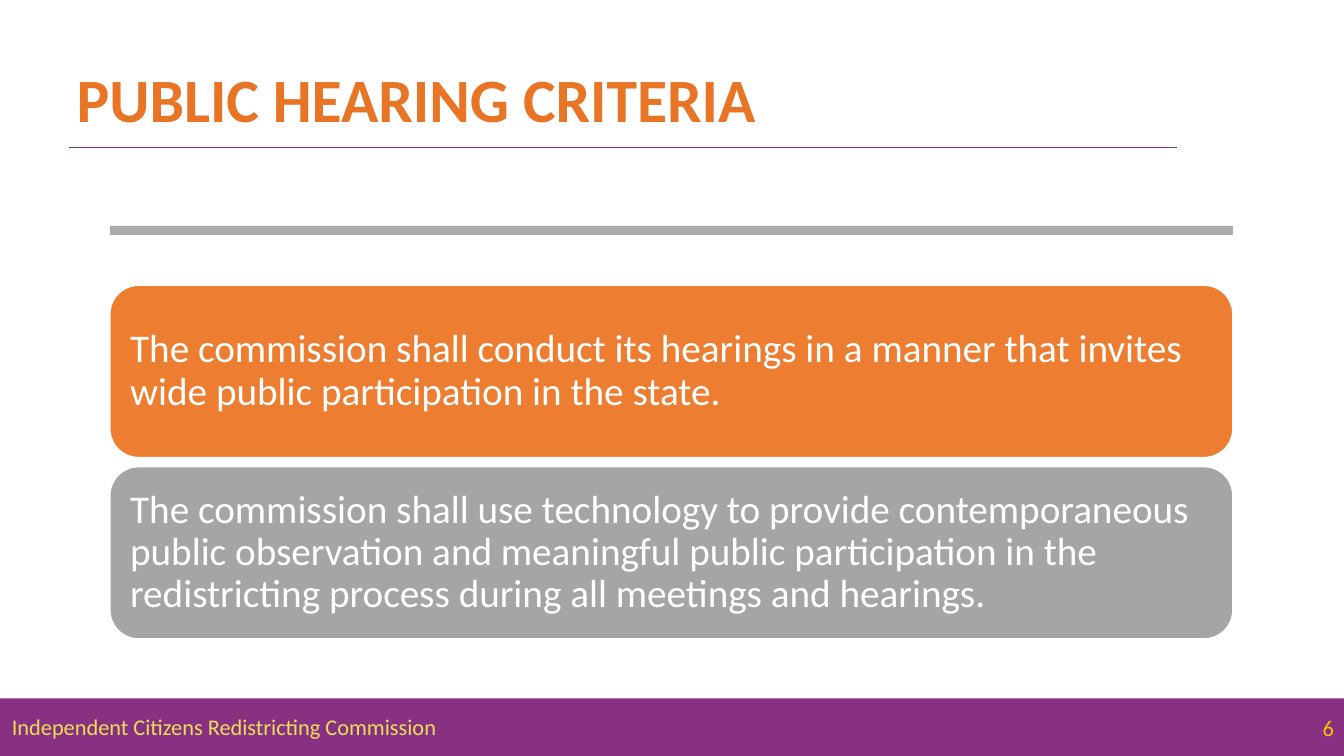
"""Build the public hearing criteria slide."""
from dataclasses import dataclass

from lxml.etree import SubElement
from pptx import Presentation
from pptx.dml.color import RGBColor
from pptx.enum.shapes import MSO_CONNECTOR, MSO_SHAPE
from pptx.enum.text import MSO_ANCHOR, MSO_AUTO_SIZE, PP_ALIGN
from pptx.oxml.ns import qn
from pptx.shapes.autoshape import Shape
from pptx.slide import Slide
from pptx.text.text import TextFrame
from pptx.util import Cm, Pt

COLORS = {
    "purple": "883182",
    "gold": "FFC000",
    "yellow": "EBDF57",
    "title": "E87425",
    "orange": "ED7D31",
    "gray": "A5A5A5",
    "bar": "808080",
    "white": "FFFFFF",
}
FONT = "Calibri"
WIDTH, HEIGHT = 33.87, 19.05
BAND_TOP = 17.6
CARD_LEFT, CARD_TOP, CARD_WIDTH, CARD_HEIGHT = 2.77, 7.19, 28.3, 4.34
CARD_PITCH = 4.57


@dataclass(frozen=True)
class Box:
    left: float
    top: float
    width: float
    height: float

    def lengths(self) -> tuple[Cm, Cm, Cm, Cm]:
        return Cm(self.left), Cm(self.top), Cm(self.width), Cm(self.height)


@dataclass(frozen=True)
class Card:
    text: str
    fill: str


CARDS = [
    Card("The commission shall conduct its hearings in a manner that invites "
         "wide public participation in the state.", "orange"),
    Card("The commission shall use technology to provide contemporaneous "
         "public observation and meaningful public participation in the "
         "redistricting process during all meetings and hearings.", "gray"),
]


def rgb(name: str) -> RGBColor:
    return RGBColor.from_string(COLORS[name])


def write(tf: TextFrame, text: str, *, size: float, color: str, bold: bool = False,
          align: PP_ALIGN = PP_ALIGN.LEFT, anchor: MSO_ANCHOR = MSO_ANCHOR.MIDDLE,
          spacing: float = 1.0, margin: float = 0.25) -> None:
    tf.word_wrap = True
    tf.auto_size = MSO_AUTO_SIZE.NONE
    tf.vertical_anchor = anchor
    tf.margin_left = tf.margin_right = Cm(margin)
    tf.margin_top = tf.margin_bottom = Cm(0.13)
    p = tf.paragraphs[0]
    p.alignment = align
    p.line_spacing = spacing
    r = p.add_run()
    r.text = text
    r.font.name = FONT
    r.font.size = Pt(size)
    r.font.bold = bold
    r.font.color.rgb = rgb(color)


def add_block(s: Slide, kind: MSO_SHAPE, box: Box, fill: str, line: str | None = None) -> Shape:
    sp = s.shapes.add_shape(kind, *box.lengths())
    sp.shadow.inherit = False
    sp.fill.solid()
    sp.fill.fore_color.rgb = rgb(fill)
    if line:
        sp.line.color.rgb = rgb(line)
        sp.line.width = Pt(1)
    else:
        sp.line.fill.background()
    return sp


def add_footer(s: Slide) -> None:
    band = add_block(s, MSO_SHAPE.RECTANGLE, Box(0, BAND_TOP, WIDTH, HEIGHT - BAND_TOP), "purple")
    write(band.text_frame, "6", size=16, color="gold", align=PP_ALIGN.RIGHT)
    label = s.shapes.add_textbox(*Box(0.05, 17.83, 13.1, 0.94).lengths())
    write(label.text_frame, "Independent Citizens Redistricting Commission",
          size=16, color="yellow", anchor=MSO_ANCHOR.TOP)


def add_title(s: Slide) -> None:
    rule = s.shapes.add_connector(MSO_CONNECTOR.STRAIGHT, Cm(1.73), Cm(3.71), Cm(29.67), Cm(3.71))
    rule.line.color.rgb = rgb("purple")
    rule.line.width = Pt(0.5)
    SubElement(rule._element.spPr, qn("a:effectLst"))
    title = s.shapes.title
    title.left, title.top, title.width, title.height = Box(1.68, 0.74, 29.03, 3.68).lengths()
    write(title.text_frame, "PUBLIC HEARING CRITERIA", size=44, color="title",
          bold=True, spacing=0.9)


def add_bar(s: Slide) -> None:
    bar = add_block(s, MSO_SHAPE.RECTANGLE, Box(CARD_LEFT, 5.69, CARD_WIDTH, 0.23), "bar")
    color = bar._element.spPr.find(qn("a:solidFill")).find(qn("a:srgbClr"))
    SubElement(color, qn("a:alpha")).set("val", "65000")


def add_card(s: Slide, card: Card, index: int) -> None:
    box = Box(CARD_LEFT, CARD_TOP + index * CARD_PITCH, CARD_WIDTH, CARD_HEIGHT)
    sp = add_block(s, MSO_SHAPE.ROUNDED_RECTANGLE, box, card.fill, "white")
    write(sp.text_frame, card.text, size=28, color="white", spacing=0.9, margin=0.3)


def main() -> None:
    prs = Presentation()
    prs.slide_width, prs.slide_height = Cm(WIDTH), Cm(HEIGHT)
    s = prs.slides.add_slide(prs.slide_layouts.get_by_name("Title Only"))
    add_footer(s)
    add_title(s)
    add_bar(s)
    for index, card in enumerate(CARDS):
        add_card(s, card, index)
    prs.save("out.pptx")


if __name__ == "__main__":
    main()
